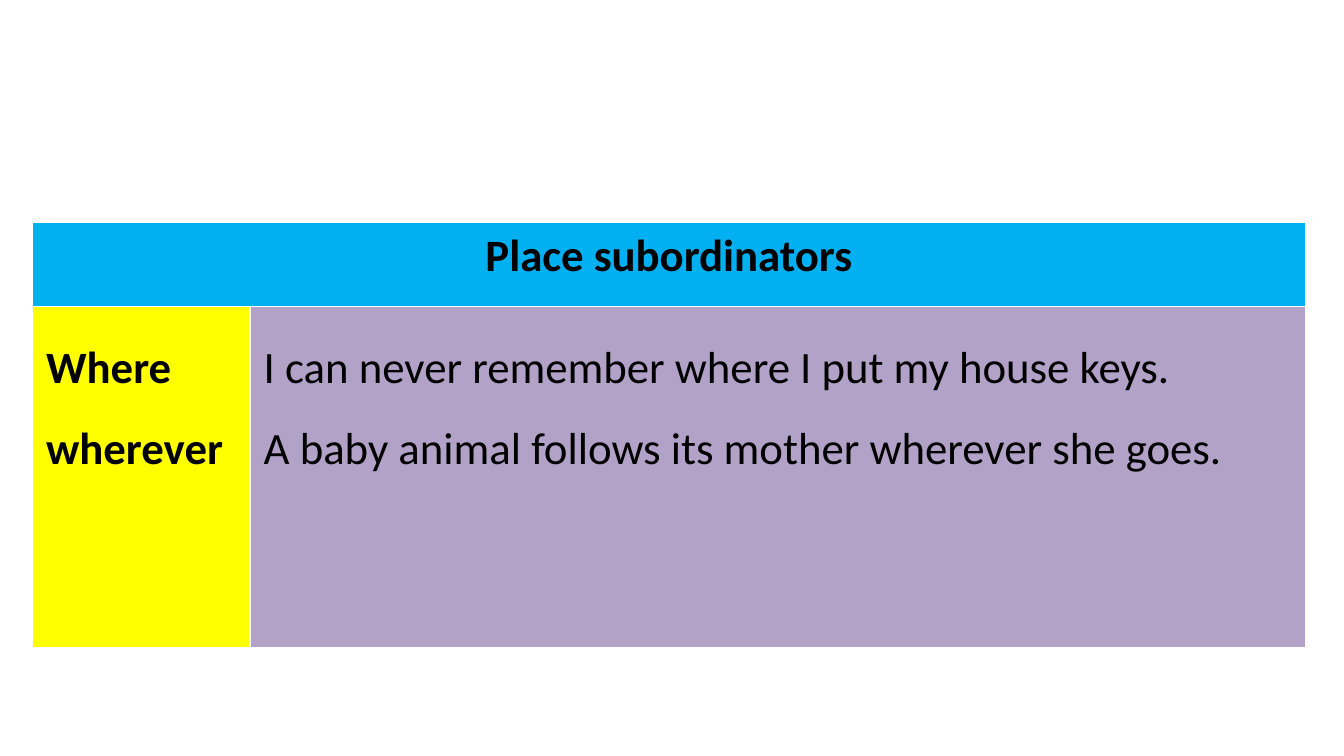
from pptx import Presentation
from pptx.dml.color import RGBColor
from pptx.enum.text import PP_ALIGN
from pptx.util import Pt

BLACK = RGBColor(0x00, 0x00, 0x00)
BLUE = RGBColor(0x00, 0xB0, 0xF0)
YELLOW = RGBColor(0xFF, 0xFF, 0x00)
PURPLE = RGBColor(0xB3, 0xA2, 0xC7)

COLUMN_WIDTHS = (116.6, 565.2)
ROW_HEIGHTS = (45.4, 182.9)


class SlideBuilder:
    """Holds the text style and the current slide."""

    font_name = "Calibri"
    font_size = 24

    def __init__(self, page):
        self.page = page

    def table(self, left, top, widths, heights):
        frame = self.page.shapes.add_table(
            len(heights), len(widths), Pt(left), Pt(top),
            Pt(sum(widths)), Pt(sum(heights)))
        table = frame.table
        table.horz_banding = False
        for column, width in zip(table.columns, widths):
            column.width = Pt(width)
        for row, height in zip(table.rows, heights):
            row.height = Pt(height)
        return table

    def cell(self, cell, lines, fill, bold=True, align=PP_ALIGN.LEFT, spacing=1.0):
        cell.fill.solid()
        cell.fill.fore_color.rgb = fill
        cell.text_frame.text = "\n".join(lines)
        for para in cell.text_frame.paragraphs:
            para.alignment = align
            para.line_spacing = spacing
            for span in para.runs:
                span.font.name = self.font_name
                span.font.size = Pt(self.font_size)
                span.font.bold = bold
                span.font.color.rgb = BLACK


def main():
    deck = Presentation()
    deck.slide_width, deck.slide_height = Pt(720), Pt(405)
    page = deck.slides.add_slide(deck.slide_layouts[6])
    builder = SlideBuilder(page)

    # Table grid with a heading across both columns
    table = builder.table(17.5, 118.8, COLUMN_WIDTHS, ROW_HEIGHTS)
    heading = table.cell(0, 0)
    heading.merge(table.cell(0, 1))
    builder.cell(heading, ["Place subordinators"], BLUE, align=PP_ALIGN.CENTER)

    # Subordinators and their example sentences
    builder.cell(table.cell(1, 0), ["Where", "wherever"], YELLOW, spacing=1.5)
    builder.cell(
        table.cell(1, 1),
        ["I can never remember where I put my house keys.",
         "A baby animal follows its mother wherever she goes."],
        PURPLE, bold=False, spacing=1.5)

    deck.save("out.pptx")


if __name__ == "__main__":
    main()
